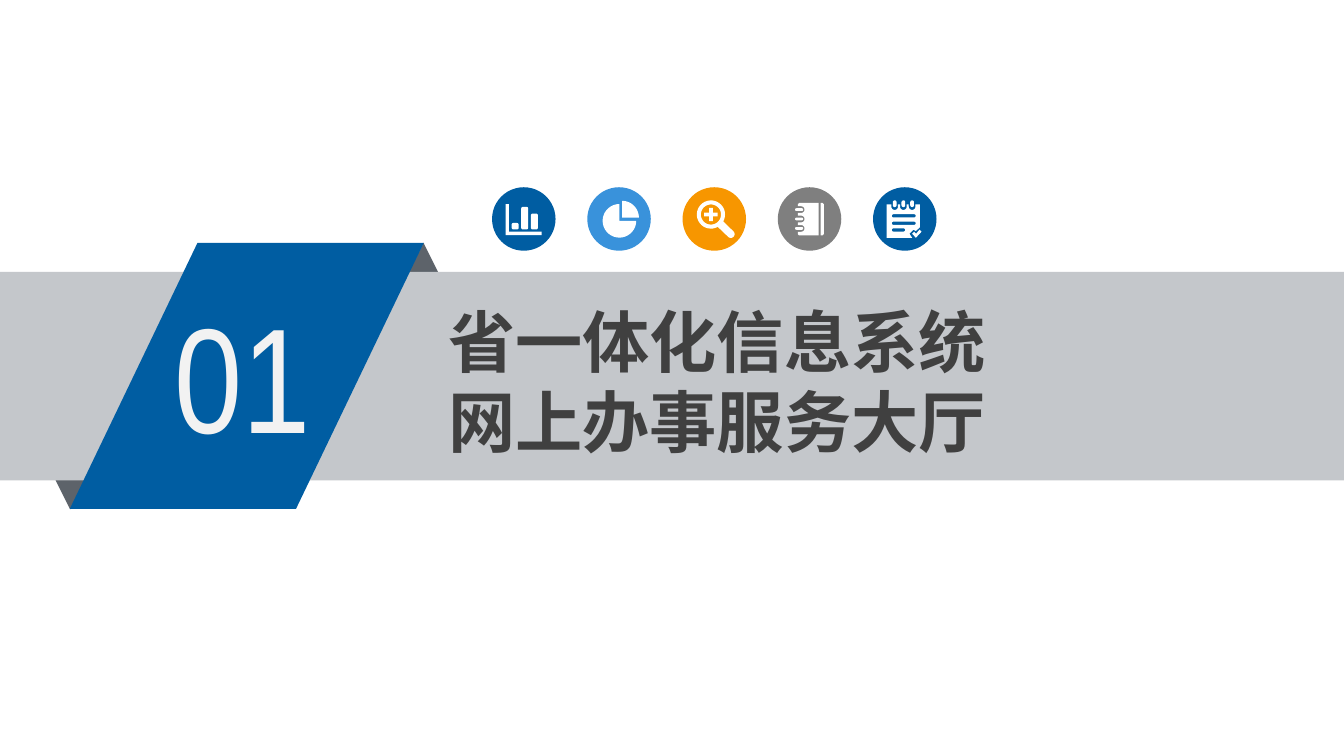
"""Build a section divider slide with a ribbon, a title and a row of icon badges."""
from dataclasses import dataclass
from math import cos, radians, sin

from lxml.etree import SubElement
from pptx import Presentation
from pptx.dml.color import RGBColor
from pptx.enum.shapes import MSO_SHAPE
from pptx.enum.text import MSO_AUTO_SIZE
from pptx.oxml.ns import qn
from pptx.util import Cm, Pt

Point = tuple[float, float]
Contour = list[Point]


@dataclass(frozen=True)
class Theme:
    blue: str = "005DA2"
    sky: str = "3992DB"
    orange: str = "F79600"
    gray: str = "7F7F7F"
    band: str = "C4C7CB"
    fold: str = "5D636A"
    white: str = "FFFFFF"
    number_color: str = "F2F2F2"
    title_color: str = "404040"
    number_font: str = "Arial Narrow"
    title_font: str = "Noto Sans CJK SC"
    number_size: float = 80
    title_size: float = 36
    title_pitch: float = 43


@dataclass(frozen=True)
class Box:
    left: float
    top: float
    width: float
    height: float

    def lengths(self) -> tuple[Cm, Cm, Cm, Cm]:
        return Cm(self.left), Cm(self.top), Cm(self.width), Cm(self.height)


@dataclass(frozen=True)
class Badge:
    color: str
    icon: list[Contour]


@dataclass(frozen=True)
class Label:
    box: Box
    text: str
    font: str
    size: float
    color: str
    bold: bool = False
    pitch: float | None = None
    inset_top: float = 0.1


THEME = Theme()
BADGE_LEFT, BADGE_TOP, BADGE_SIZE, BADGE_PITCH = 9.3, 3.54, 1.2, 1.8
ICON_UNIT = 0.0254


def arc(x: float, y: float, radius: float, start: int, end: int) -> Contour:
    steps = max(6, abs(end - start) // 10)
    angles = [radians(start + (end - start) * step / steps) for step in range(steps + 1)]
    return [(x + radius * cos(angle), y + radius * sin(angle)) for angle in angles]


def rounded(left: float, top: float, right: float, bottom: float, radius: float) -> Contour:
    return (arc(right - radius, bottom - radius, radius, 0, 90)
            + arc(left + radius, bottom - radius, radius, 90, 180)
            + arc(left + radius, top + radius, radius, 180, 270)
            + arc(right - radius, top + radius, radius, 270, 360))


def bar_chart_icon() -> list[Contour]:
    axes = [(-13.5, -11), (-11, -11), (-11, 9.5), (13.2, 9.5), (13.2, 12), (-13.5, 12)]
    tops = {-9: 3, -1.9: -9, 5.3: -4}
    return [axes] + [rounded(left, top, left + 5.2, 7.8, 1.3) for left, top in tops.items()]


def pie_icon() -> list[Contour]:
    return [[(0.3, 1.4)] + arc(0.3, 1.4, 12.5, 0, 270),
            [(2.3, -1)] + arc(2.3, -1, 12.5, -90, 0)]


def magnifier_icon() -> list[Contour]:
    x, y, long, short = -2.5, -3.3, 5, 1.4
    outline = arc(x, y, 10.5, 61, 389) + arc(12.3, 11.3, 2.8, -45, 135)
    corners = [(short, long), (short, short), (long, short)]
    quarter = corners + [(across, -down) for across, down in reversed(corners)]
    plus = quarter + [(-across, -down) for across, down in quarter]
    return [outline, arc(x, y, 7.5, 0, 360), [(x + across, y + down) for across, down in plus]]


def notebook_icon() -> list[Contour]:
    rings = (7, 0, -7)
    pages = [(-8.7, -11), (-7.7, -12), (6.7, -12), (6.7, 12.2), (-7.7, 12.2), (-8.7, 11.2)]
    for y in rings:
        pages += [(-8.7, y + 2.5)] + arc(-6.2, y, 2.5, 90, -90) + [(-8.7, y - 2.5)]
    spine = [(8.3, -12), (9.7, -12), (10.7, -11), (10.7, 11.2), (9.7, 12.2), (8.3, 12.2)]
    return [pages, spine] + [rounded(-10.7, y - 1, -4.7, y + 1, 1) for y in rings]


def checklist_icon() -> list[Contour]:
    pins = (-7.5, -1, 5.5)
    sheet = [(-13.5, -10.8)]
    for x in pins:
        sheet += [(x - 2.5, -10.8)] + arc(x, -9.2, 2.5, 180, 0) + [(x + 2.5, -10.8)]
    sheet += [(11.3, -10.8), (11.3, 6.2), (8.3, 9), (6.5, 8), (3.5, 11), (5.5, 14), (-13.5, 14)]
    tick = [(5.5, 11), (7, 9.5), (8.5, 11), (11, 8), (12.5, 9.5), (8.3, 14)]
    line_ends = {-2.3: 8.2, 3.2: 8.2, 8.2: 0.3}
    lines = [rounded(-9.6, y - 1.2, right, y + 1.2, 1.2) for y, right in line_ends.items()]
    return [sheet, tick] + lines + [rounded(x - 1.4, -13.8, x + 1.4, -8.8, 1.4) for x in pins]


def paint(shape, color: str) -> None:
    shape.shadow.inherit = False
    shape.fill.solid()
    shape.fill.fore_color.rgb = RGBColor.from_string(color)
    shape.line.fill.background()


def draw_shape(page, kind: MSO_SHAPE, box: Box, color: str):
    shape = page.shapes.add_shape(kind, *box.lengths())
    paint(shape, color)
    return shape


def draw_badge(page, badge: Badge, left: float) -> None:
    draw_shape(page, MSO_SHAPE.OVAL, Box(left, BADGE_TOP, BADGE_SIZE, BADGE_SIZE), badge.color)
    center_x, center_y = left + BADGE_SIZE / 2, BADGE_TOP + BADGE_SIZE / 2
    contours = [[(Cm(center_x + x * ICON_UNIT), Cm(center_y + y * ICON_UNIT))
                 for x, y in contour] for contour in badge.icon]
    builder = page.shapes.build_freeform(*contours[0][0])
    for contour in contours:
        if contour is not contours[0]:
            builder.move_to(*contour[0])
        builder.add_line_segments(contour[1:], close=True)
    paint(builder.convert_to_shape(), THEME.white)


def draw_label(page, label: Label) -> None:
    frame = page.shapes.add_textbox(*label.box.lengths()).text_frame
    frame.word_wrap = True
    frame.auto_size = MSO_AUTO_SIZE.SHAPE_TO_FIT_TEXT
    frame.margin_left = frame.margin_right = Cm(0.19)
    frame.margin_top, frame.margin_bottom = Cm(label.inset_top), Cm(0.1)
    frame.text = label.text
    for paragraph in frame.paragraphs:
        if label.pitch:
            paragraph.line_spacing = Pt(label.pitch)
        for span in paragraph.runs:
            span.font.size = Pt(label.size)
            span.font.bold = label.bold
            span.font.color.rgb = RGBColor.from_string(label.color)
            span.font.name = label.font
            SubElement(span.font._element, qn("a:ea"), typeface=label.font)


def main() -> None:
    deck = Presentation()
    deck.slide_width, deck.slide_height = Cm(25.4), Cm(14.29)
    page = deck.slides.add_slide(deck.slide_layouts[6])

    draw_shape(page, MSO_SHAPE.ISOSCELES_TRIANGLE, Box(6.86, 4.59, 2.29, 2.31), THEME.fold)
    lower_fold = draw_shape(page, MSO_SHAPE.ISOSCELES_TRIANGLE,
                            Box(0.18, 7.32, 2.29, 2.31), THEME.fold)
    lower_fold.rotation = 180
    draw_shape(page, MSO_SHAPE.RECTANGLE, Box(0, 5.14, 25.4, 3.94), THEME.band)
    ribbon = draw_shape(page, MSO_SHAPE.PARALLELOGRAM, Box(1.32, 4.59, 6.69, 5.03), THEME.blue)
    ribbon.adjustments[0] = 0.48

    draw_label(page, Label(Box(3.1, 5.28, 3.68, 3.61), "01", THEME.number_font,
                           THEME.number_size, THEME.number_color))
    draw_label(page, Label(Box(8.28, 5.46, 14.02, 3.25), "省一体化信息系统\n网上办事服务大厅",
                           THEME.title_font, THEME.title_size, THEME.title_color,
                           bold=True, pitch=THEME.title_pitch, inset_top=0.22))

    badges = [Badge(THEME.blue, bar_chart_icon()), Badge(THEME.sky, pie_icon()),
              Badge(THEME.orange, magnifier_icon()), Badge(THEME.gray, notebook_icon()),
              Badge(THEME.blue, checklist_icon())]
    for index, badge in enumerate(badges):
        draw_badge(page, badge, BADGE_LEFT + index * BADGE_PITCH)

    deck.save("out.pptx")


if __name__ == "__main__":
    main()
